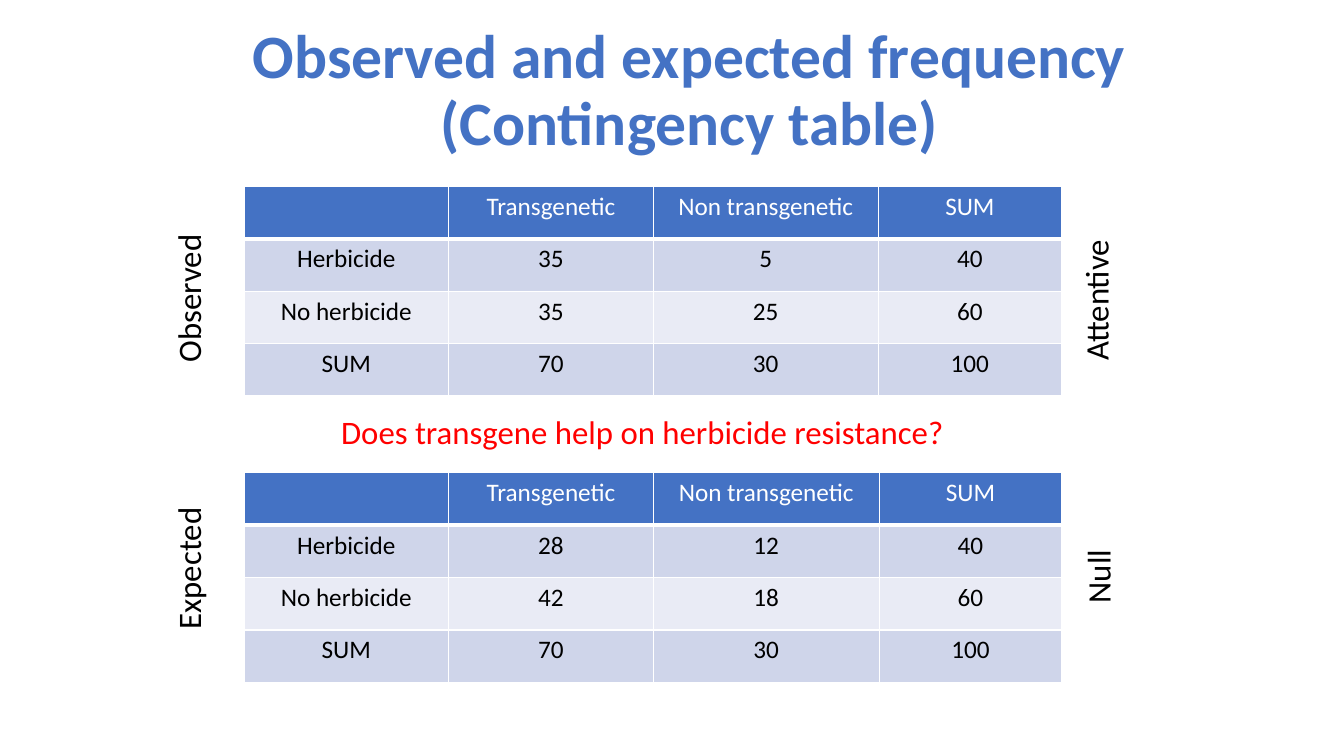
from dataclasses import dataclass

from lxml import etree
from pptx import Presentation
from pptx.dml.color import RGBColor
from pptx.enum.text import MSO_ANCHOR, PP_ALIGN
from pptx.oxml.ns import qn
from pptx.slide import Slide
from pptx.table import _Cell
from pptx.text.text import TextFrame
from pptx.util import Emu, Pt

CENTER = PP_ALIGN.CENTER
MIDDLE = MSO_ANCHOR.MIDDLE
SCALE = 9144  # EMU per px, at 100 px to the inch


@dataclass(frozen=True)
class Theme:
    font: str = "Calibri"
    blue: str = "4472C4"
    dark: str = "CFD5EA"
    light: str = "E9EBF5"
    white: str = "FFFFFF"
    black: str = "000000"
    red: str = "FF0000"
    title: float = 44
    label: float = 23.4
    cell: float = 18


@dataclass(frozen=True)
class Label:
    text: str
    left: int
    top: int
    width: int = 223
    height: int = 72
    size: float = Theme.label
    color: str = Theme.black
    bold: bool = False
    turn: int = 270
    space: float = 1.0


@dataclass(frozen=True)
class Grid:
    top: int
    widths: tuple[int, ...]
    counts: tuple[tuple[int, int], ...]


THEME = Theme()
LEFT, ROW = 242, 52
HEADS = ("Transgenetic", "Non transgenetic", "SUM")
NAMES = ("Herbicide", "No herbicide", "SUM")

GRIDS = (
    Grid(185, (203, 203, 223, 182), ((35, 5), (35, 25))),
    Grid(469, (203, 203, 224, 181), ((28, 12), (42, 18))),
)
LABELS = (
    Label("Observed and expected frequency (Contingency table)", 109, 19, 1150, 145,
          size=THEME.title, color=THEME.blue, bold=True, turn=0, space=0.9),
    Label("Does transgene help on herbicide resistance?", 203, 392, 868,
          color=THEME.red, turn=0),
    Label("Observed", 75, 260),
    Label("Expected", 75, 528),
    Label("Null", 977, 536),
    Label("Attentive", 975, 262),
)


def px(count: int) -> Emu:
    return Emu(count * SCALE)


def write(frame: TextFrame, text: str, *, size: float, color: str,
          bold: bool = False, space: float = 1.0) -> None:
    para = frame.paragraphs[0]
    para.alignment = CENTER
    para.line_spacing = space
    para.font.size = Pt(size)
    if not text:
        return
    run = para.add_run()
    run.text = text
    font = run.font
    font.name, font.size, font.bold = THEME.font, Pt(size), bold
    font.color.rgb = RGBColor.from_string(color)


def edge(cell: _Cell, tag: str, width: float) -> None:
    """Add one white border to a cell; call before the cell is filled."""
    props = cell._tc.get_or_add_tcPr()
    line = etree.SubElement(props, qn(tag), w=str(Pt(width)))
    fill = etree.SubElement(line, qn("a:solidFill"))
    etree.SubElement(fill, qn("a:srgbClr"), val=THEME.white)


def paint(cell: _Cell, text: str, row: int) -> None:
    head = row == 0
    for tag in ("a:lnL", "a:lnR", "a:lnT", "a:lnB"):
        thick = (head and tag == "a:lnB") or (row == 1 and tag == "a:lnT")
        edge(cell, tag, 3 if thick else 1)
    shade = THEME.blue if head else (THEME.light, THEME.dark)[row % 2]
    cell.fill.solid()
    cell.fill.fore_color.rgb = RGBColor.from_string(shade)
    write(cell.text_frame, text, size=THEME.cell,
          color=THEME.white if head else THEME.black)


def tally(counts: tuple[tuple[int, int], ...]) -> list[tuple[str, ...]]:
    """Return all table rows, with headings and sums."""
    sums = tuple(sum(col) for col in zip(*counts))
    rows = [("", *HEADS)]
    for name, pair in zip(NAMES, (*counts, sums)):
        rows.append((name, *map(str, pair), str(sum(pair))))
    return rows


def add_grid(slide: Slide, grid: Grid) -> None:
    rows = tally(grid.counts)
    table = slide.shapes.add_table(
        len(rows), len(grid.widths), px(LEFT), px(grid.top),
        px(sum(grid.widths)), px(ROW * len(rows))).table
    for col, width in zip(table.columns, grid.widths):
        col.width = px(width)
    for i, row in enumerate(rows):
        table.rows[i].height = px(ROW)
        for j, text in enumerate(row):
            paint(table.cell(i, j), text, i)


def add_label(slide: Slide, label: Label) -> None:
    box = slide.shapes.add_textbox(
        px(label.left), px(label.top), px(label.width), px(label.height))
    box.rotation = label.turn
    frame = box.text_frame
    frame.word_wrap = True
    frame.vertical_anchor = MIDDLE
    write(frame, label.text, size=label.size, color=label.color,
          bold=label.bold, space=label.space)


def main() -> None:
    deck = Presentation()
    deck.slide_width, deck.slide_height = px(1333), px(750)
    slide = deck.slides.add_slide(deck.slide_layouts[6])
    for grid in GRIDS:
        add_grid(slide, grid)
    for label in LABELS:
        add_label(slide, label)
    deck.save("out.pptx")


if __name__ == "__main__":
    main()
